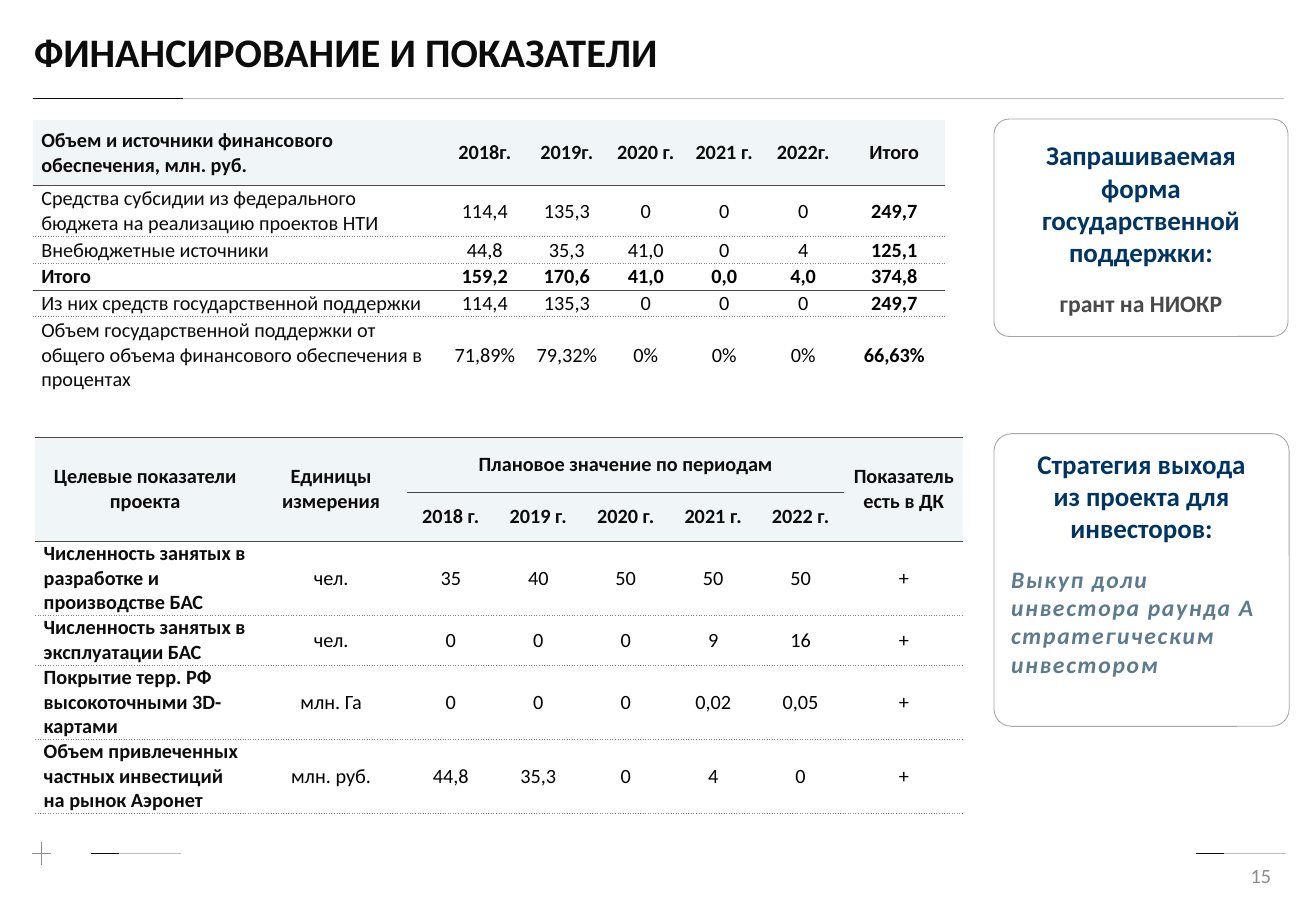
from lxml import etree
from pptx import Presentation
from pptx.dml.color import RGBColor
from pptx.enum.shapes import MSO_CONNECTOR as CONNECTOR, MSO_SHAPE as SHAPE
from pptx.enum.text import MSO_ANCHOR as ANCHOR, PP_ALIGN as ALIGN
from pptx.oxml.ns import qn
from pptx.util import Inches, Pt

FONT = "Calibri"
INK, BLACK, GRAPHITE = "0C0C0C", "000000", "494949"
NAVY, STEEL, GRAY, LIGHT = "003462", "5C7B8F", "8C8C8C", "BFBFBF"
HEADER_FILL = "F0F5F8"
SOLID, DOTTED = (GRAPHITE, "solid"), ("868686", "sysDot")

FUNDING = [
    ["Объем и источники финансового обеспечения, млн. руб.",
     "2018г.", "2019г.", "2020 г.", "2021 г.", "2022г.", "Итого"],
    ["Средства субсидии из федерального бюджета на реализацию проектов НТИ",
     "114,4", "135,3", "0", "0", "0", "249,7"],
    ["Внебюджетные источники", "44,8", "35,3", "41,0", "0", "4", "125,1"],
    ["Итого", "159,2", "170,6", "41,0", "0,0", "4,0", "374,8"],
    ["Из них средств государственной поддержки",
     "114,4", "135,3", "0", "0", "0", "249,7"],
    ["Объем государственной поддержки от общего объема финансового "
     "обеспечения в процентах",
     "71,89%", "79,32%", "0%", "0%", "0%", "66,63%"],
]
TARGETS = [
    ["Целевые показатели проекта", "Единицы измерения",
     "Плановое значение по периодам", "", "", "", "", "Показатель есть в ДК"],
    ["", "", "2018 г.", "2019 г.", "2020 г.", "2021 г.", "2022 г.", ""],
    ["Численность занятых в разработке и производстве БАС",
     "чел.", "35", "40", "50", "50", "50", "+"],
    ["Численность занятых в эксплуатации БАС",
     "чел.", "0", "0", "0", "9", "16", "+"],
    ["Покрытие терр. РФ высокоточными 3D-картами",
     "млн. Га", "0", "0", "0", "0,02", "0,05", "+"],
    ["Объем привлеченных частных инвестиций на рынок Аэронет",
     "млн. руб.", "44,8", "35,3", "0", "4", "0", "+"],
]


def rgb(color):
    return RGBColor.from_string(color)


def add_span(para, text, size, color, bold=False, italic=False):
    span = para.add_run()
    span.text = text
    font = span.font
    font.name, font.size, font.bold, font.italic = FONT, Pt(size), bold, italic
    font.color.rgb = rgb(color)
    return span


def set_frame(frame, left, top, right, bottom, anchor=ANCHOR.MIDDLE):
    frame.word_wrap = True
    frame.vertical_anchor = anchor
    frame.margin_left, frame.margin_top = Inches(left), Inches(top)
    frame.margin_right, frame.margin_bottom = Inches(right), Inches(bottom)


def add_line(page, x1, y1, x2, y2, color):
    line = page.shapes.add_connector(
        CONNECTOR.STRAIGHT, Inches(x1), Inches(y1), Inches(x2), Inches(y2))
    line.line.color.rgb = rgb(color)
    line.line.width = Pt(0.5)
    etree.SubElement(line._element.spPr, qn("a:effectLst"))


def add_accent_rule(page, left, right, y, accent):
    """Light rule whose first part is dark."""
    add_line(page, left, y, right, y, LIGHT)
    add_line(page, left, y, left + accent, y, INK)


def add_title(page, text):
    title = page.shapes.title
    title.left, title.top = Inches(0.18), Inches(0.09)
    title.width, title.height = Inches(7.92), Inches(0.72)
    set_frame(title.text_frame, 0.1, 0.05, 0.1, 0.05)
    para = title.text_frame.paragraphs[0]
    para.alignment, para.line_spacing = ALIGN.LEFT, 0.9
    add_span(para, text, 24, INK, bold=True)


def add_card(page, top, width, height, heading, corner):
    """Rounded box with a heading; returns its text frame."""
    card = page.shapes.add_shape(SHAPE.ROUNDED_RECTANGLE, Inches(8.18),
                                 Inches(top), Inches(width), Inches(height))
    card.adjustments[0] = corner
    card.shadow.inherit = False
    card.fill.solid()
    card.fill.fore_color.rgb = rgb("FFFFFF")
    card.line.color.rgb = rgb("A6A6A6")
    card.line.width = Pt(0.5)
    para = card.text_frame.paragraphs[0]
    para.alignment, para.space_after = ALIGN.CENTER, Pt(12)
    for number, text in enumerate(heading):
        if number:
            para.add_line_break()
        add_span(para, text, 16, NAVY, bold=True)
    return card.text_frame


def set_border(cell, side, rule):
    border = etree.SubElement(cell._tc.get_or_add_tcPr(), qn("a:" + side))
    if rule is None:
        border.set("w", "0")
        etree.SubElement(border, qn("a:noFill"))
        return
    color, dash = rule
    border.set("w", str(Pt(0.5)))
    fill = etree.SubElement(border, qn("a:solidFill"))
    etree.SubElement(fill, qn("a:srgbClr")).set("val", color)
    etree.SubElement(border, qn("a:prstDash")).set("val", dash)


def add_grid(page, left, top, widths, heights, rows, rules, headers, merges,
             is_bold, left_cells):
    """Table with one horizontal rule above each row and one below the last."""
    table = page.shapes.add_table(
        len(rows), len(widths), Inches(left), Inches(top),
        Inches(sum(widths)), Inches(sum(heights))).table
    table.first_row = table.horz_banding = False
    for column, width in zip(table.columns, widths):
        column.width = Inches(width)
    for row, height in zip(table.rows, heights):
        row.height = Inches(height)
    for first, last in merges:
        table.cell(*first).merge(table.cell(*last))
    for r, texts in enumerate(rows):
        for c, text in enumerate(texts):
            cell = table.cell(r, c)
            side = 0.07 if r < headers or c == 0 else 0.01
            cell.margin_left = cell.margin_right = Inches(side)
            cell.margin_top = cell.margin_bottom = 0
            cell.vertical_anchor = ANCHOR.MIDDLE
            set_border(cell, "lnL", None)
            set_border(cell, "lnR", None)
            set_border(cell, "lnT", None if cell.is_spanned else rules[r])
            set_border(cell, "lnB", rules[r + 1])
            if r < headers:
                cell.fill.solid()
                cell.fill.fore_color.rgb = rgb(HEADER_FILL)
            else:
                cell.fill.background()
            if text:
                para = cell.text_frame.paragraphs[0]
                para.alignment = ALIGN.LEFT if left_cells(r, c) else ALIGN.CENTER
                color = INK if r < headers or c == 0 else BLACK
                add_span(para, text, 12, color, bold=is_bold(r, c))


def main():
    deck = Presentation()
    deck.slide_width, deck.slide_height = Inches(10.83), Inches(7.5)
    page = deck.slides.add_slide(deck.slide_layouts[5])

    add_title(page, "ФИНАНСИРОВАНИЕ И ПОКАЗАТЕЛИ")
    add_accent_rule(page, 0.27, 10.57, 0.81, 1.24)
    for left in (0.75, 9.84):
        add_accent_rule(page, left, left + 0.74, 7.03, 0.23)
    add_line(page, 0.34, 6.93, 0.34, 7.12, GRAY)
    add_line(page, 0.26, 7.03, 0.42, 7.03, GRAY)

    add_grid(page, 0.27, 0.99, [3.37, 0.7, 0.65, 0.65, 0.64, 0.66, 0.84],
             [0.54, 0.42, 0.22, 0.22, 0.22, 0.63], FUNDING,
             [None, SOLID, DOTTED, DOTTED, SOLID, DOTTED, None], 1, [],
             lambda r, c: r in (0, 3) or c == 6, lambda r, c: c == 0)
    add_grid(page, 0.29, 3.6, [1.81, 1.25] + [0.72] * 5 + [0.98],
             [0.45, 0.4, 0.61, 0.41, 0.61, 0.61], TARGETS,
             [SOLID] * 3 + [DOTTED] * 4, 2,
             [((0, c), (1, c)) for c in (0, 1, 7)] + [((0, 2), (0, 6))],
             lambda r, c: r < 2 or c == 0, lambda r, c: r > 1 and c == 0)

    support = add_card(page, 0.98, 2.42, 1.79,
                       ["Запрашиваемая форма государственной поддержки:"], 0.07)
    set_frame(support, 0.1, 0.12, 0.1, 0.12)
    para = support.add_paragraph()
    para.alignment = ALIGN.CENTER
    add_span(para, "грант на НИОКР", 14, GRAPHITE, bold=True)

    strategy = add_card(page, 3.57, 2.43, 2.41,
                        ["Стратегия выхода", "из проекта для инвесторов:"], 0.06)
    set_frame(strategy, 0.1, 0.07, 0.1, 0.05, ANCHOR.TOP)
    para = strategy.add_paragraph()
    para.alignment = ALIGN.LEFT
    span = add_span(para, "Выкуп доли инвестора раунда А стратегическим инвестором",
                    14, STEEL, bold=True, italic=True)
    span.font._element.set("spc", "100")

    number = page.shapes.add_textbox(Inches(8.12), Inches(7.01),
                                     Inches(2.44), Inches(0.4)).text_frame
    set_frame(number, 0.1, 0.05, 0.1, 0.05)
    number.paragraphs[0].alignment = ALIGN.RIGHT
    add_span(number.paragraphs[0], "15", 12, GRAY)

    deck.save("out.pptx")


if __name__ == "__main__":
    main()
